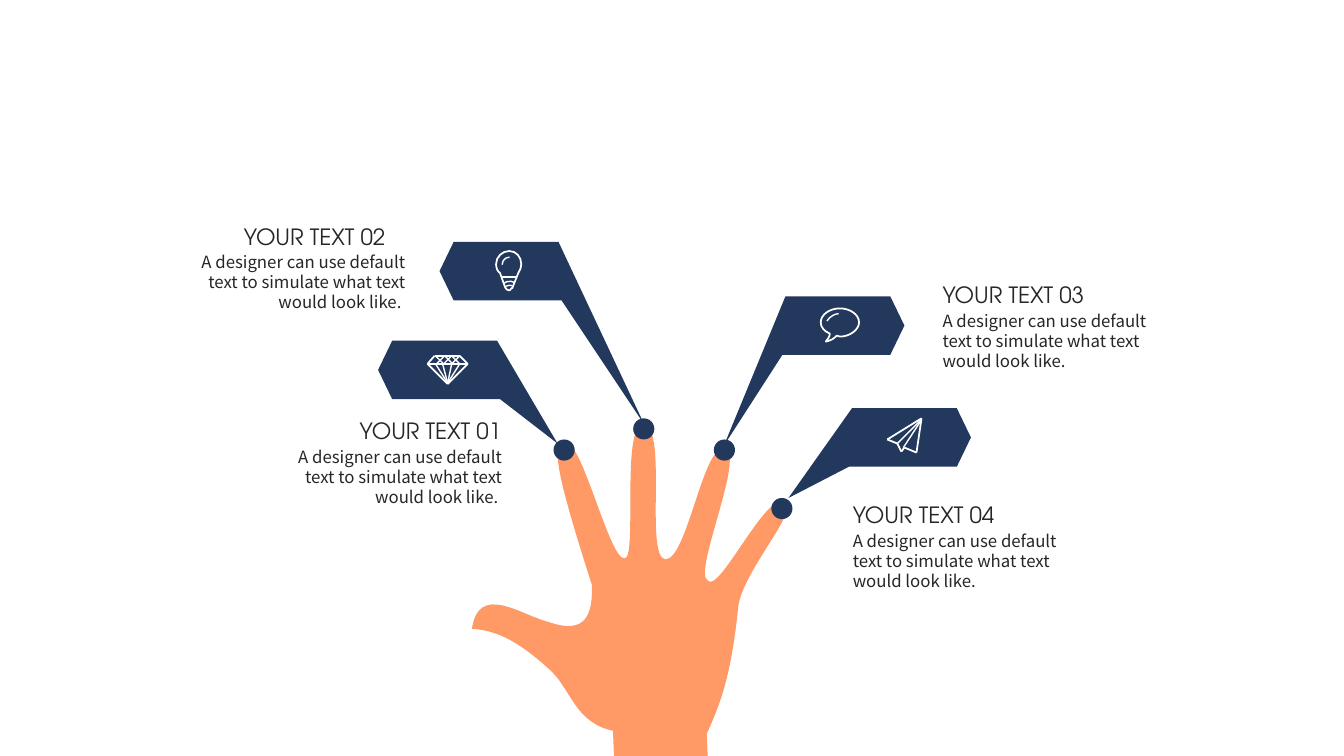
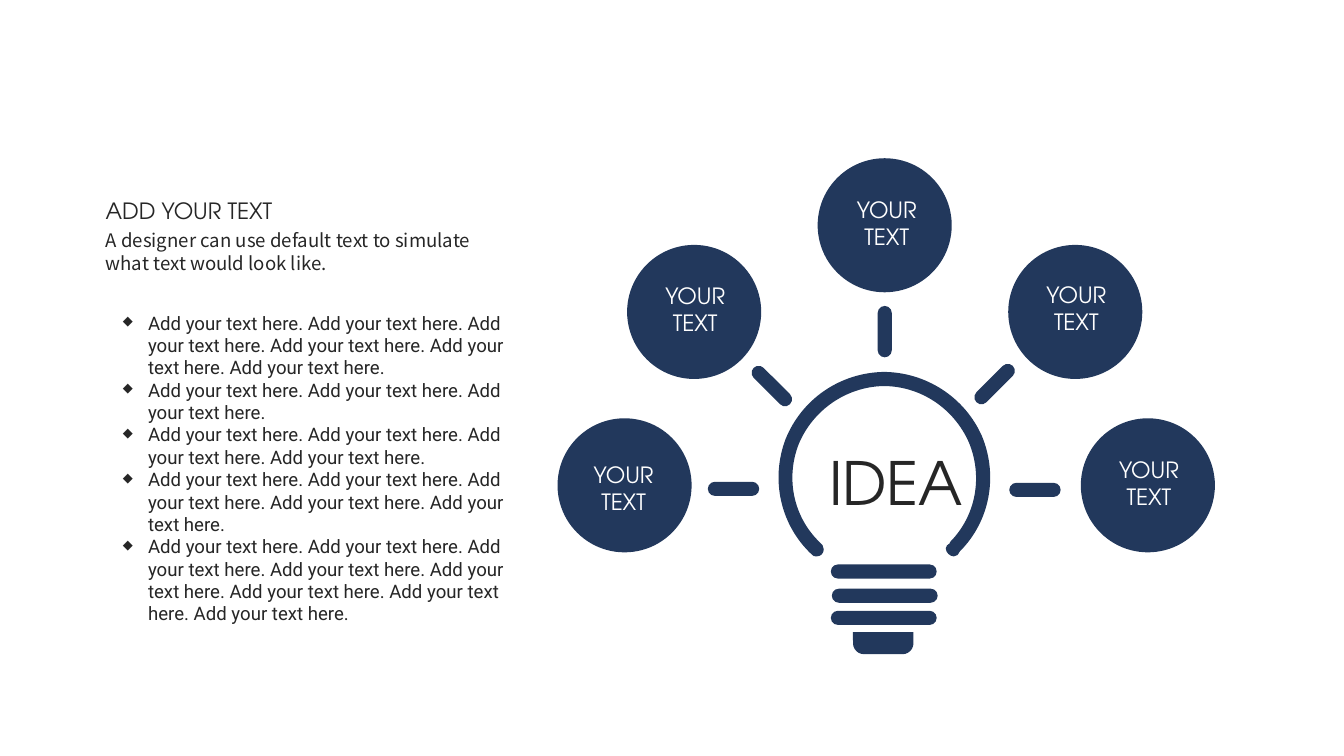
import pptx
import pptx.util
import pptx.dml.color
import pptx.enum.shapes
import pptx.enum.text
import pptx.oxml
import pptx.oxml.ns
import lxml.etree

COLORS = {"navy": "22385C", "skin": "FF9966", "ink": "262626", "white": "FFFFFF"}
HEADING_FONT = "TeX Gyre Adventor"
BODY_FONT = "Noto Sans CJK SC"
LIST_FONT = "Roboto"
CM_PER_INCH = 2.54
SHAPES = pptx.enum.shapes.MSO_SHAPE
ALIGN = {
    "left": pptx.enum.text.PP_ALIGN.LEFT,
    "center": pptx.enum.text.PP_ALIGN.CENTER,
    "right": pptx.enum.text.PP_ALIGN.RIGHT,
}

SAMPLE = "A designer can use default text to simulate what text would look like."

HAND = [
    (6.09, 7.51), (6.08, 7.25),
    (5.71, 7.17, 5.67, 6.86, 5.47, 6.66), (5.26, 6.47, 5, 6.25, 4.68, 6.24),
    (4.75, 5.78, 5.16, 6.1, 5.44, 6.17), (5.83, 6.31, 5.88, 6.07, 5.87, 5.8),
    (5.45, 4.49, 5.5, 4.44, 5.61, 4.4), (5.77, 4.35, 6.05, 5.58, 6.2, 5.54),
    (6.32, 5.51, 6.16, 4.21, 6.38, 4.22), (6.63, 4.22, 6.39, 5.53, 6.6, 5.55),
    (6.82, 5.55, 6.98, 4.36, 7.2, 4.45), (7.38, 4.55, 6.87, 5.69, 7.02, 5.76),
    (7.13, 5.9, 7.61, 4.85, 7.79, 4.98), (7.93, 5.07, 7.34, 5.7, 7.32, 6.04),
    (7.25, 6.72, 7.14, 6.99, 7.01, 7.28), (7.02, 7.52),
]

CALLOUTS = [
    {"tip": (5.53, 4.4), "corner": (4.93, 3.38), "side": -1, "dot": (5.49, 4.36),
     "title": "YOUR TEXT 01", "title_at": (3.28, 4.09), "title_align": "right",
     "body": SAMPLE + " ", "body_at": (2.85, 4.38), "align": "right"},
    {"tip": (6.39, 4.21), "corner": (5.54, 2.4), "side": -1, "dot": (6.28, 4.15),
     "title": "YOUR TEXT 02", "title_at": (2.32, 2.16), "title_align": "left",
     "body": SAMPLE + " ", "body_at": (1.89, 2.45), "align": "right"},
    {"tip": (7.18, 4.42), "corner": (7.79, 2.94), "side": 1, "dot": (7.08, 4.36),
     "title": "YOUR TEXT 03", "title_at": (9.25, 2.74), "title_align": "left",
     "body": SAMPLE, "body_at": (9.25, 3.03), "align": "left"},
    {"tip": (7.82, 4.94), "corner": (8.45, 4.05), "side": 1, "dot": (7.65, 4.94),
     "title": "YOUR TEXT 04", "title_at": (8.36, 4.92), "title_align": "left",
     "body": SAMPLE, "body_at": (8.36, 5.22), "align": "left"},
]

DIAMOND_TIP = (4.44, 3.8)
ICONS = {
    "speech": {
        "outline": [
            (8.33, 3.06), (8.43, 3.06, 8.52, 3.12, 8.52, 3.2),
            (8.52, 3.27, 8.43, 3.34, 8.33, 3.34), (8.3, 3.33),
            (8.27, 3.36, 8.24, 3.38, 8.19, 3.39), (8.2, 3.37, 8.23, 3.35, 8.23, 3.31),
            (8.18, 3.29, 8.14, 3.25, 8.14, 3.2), (8.14, 3.12, 8.23, 3.06, 8.33, 3.06),
        ],
        "arcs": [(8.18, 3.11, 0.31, 301.2, 162, 193.58)],
    },
    "diamond": {
        "edges": [(4.31, 3.53), (4.56, 3.53), (4.64, 3.61), (4.44, 3.81),
                  (4.24, 3.61), (4.31, 3.53)],
        "details": [((4.25, 3.61), (4.63, 3.61))]
        + [(DIAMOND_TIP, (x, 3.61)) for x in (4.32, 4.39, 4.48, 4.56)]
        + [((x, 3.53), (x + 0.08, 3.61)) for x in (4.32, 4.41, 4.48)]
        + [((x, 3.53), (x - 0.08, 3.61)) for x in (4.41, 4.48, 4.56)],
    },
    "plane": {
        "edges": [(9.14, 4.15), (8.8, 4.36), (8.9, 4.4), (8.94, 4.48),
                  (8.97, 4.44), (9.09, 4.49), (9.14, 4.15)],
        "details": [((9.13, 4.17), (8.9, 4.4)), ((9.13, 4.18), (8.96, 4.44))],
    },
    "bulb": {
        "outline": [
            (5.05, 2.49), (5.12, 2.49, 5.17, 2.55, 5.17, 2.62),
            (5.17, 2.65, 5.16, 2.68, 5.14, 2.71), (5.08, 2.86), (5.07, 2.86),
            (5.07, 2.87, 5.06, 2.88, 5.05, 2.88), (5.03, 2.88, 5.02, 2.87, 5.01, 2.85),
            (4.96, 2.71), (4.93, 2.69, 4.92, 2.65, 4.92, 2.62),
            (4.92, 2.55, 4.98, 2.49, 5.05, 2.49),
        ],
        "edges": [(4.97, 2.75), (5.12, 2.75)],
        "arcs": [(4.98, 2.55, 0.15, 270, 162, 215.5),
                 (4.97, 2.79, 0.17, 309, 168.25, 210.6),
                 (4.98, 2.83, 0.15, 300, 175.25, 210.13)],
    },
}

CIRCLE_SIZE = 1.33
CIRCLES = [
    ((5.53, 4.15), (5.76, 4.53)),
    ((6.22, 2.43), (6.47, 2.75)),
    ((8.11, 1.57), (8.37, 1.9)),
    ((10, 2.43), (10.25, 2.74)),
    ((10.72, 4.15), (10.97, 4.48)),
]
PILL_HEIGHT = 0.14
PILLS = [
    (8.24, 5.6, 1.05, 0), (8.25, 5.84, 1.05, 0), (8.24, 6.06, 1.05, 0),
    (7.02, 4.78, 0.51, 0), (7.4, 3.76, 0.51, 45), (9.61, 3.74, 0.51, 315),
    (10.01, 4.79, 0.51, 0), (8.52, 3.22, 0.51, 90),
]
BULB_RING = [
    (8.76, 3.69), (9.18, 3.69, 9.57, 3.94, 9.74, 4.33), (9.9, 4.72, 9.82, 5.17, 9.52, 5.47),
    (9.51, 5.5, 9.49, 5.52, 9.46, 5.52), (9.42, 5.52, 9.38, 5.48, 9.38, 5.44),
    (9.38, 5.42, 9.4, 5.4, 9.42, 5.39), (9.42, 5.38),
    (9.68, 5.12, 9.75, 4.73, 9.61, 4.39), (9.46, 4.05, 9.13, 3.83, 8.76, 3.83),
    (8.39, 3.84, 8.06, 4.07, 7.92, 4.41), (7.79, 4.75, 7.87, 5.13, 8.13, 5.38),
    (8.15, 5.39, 8.17, 5.42, 8.17, 5.45), (8.17, 5.49, 8.14, 5.52, 8.1, 5.52),
    (8.08, 5.52, 8.06, 5.52, 8.05, 5.5), (7.74, 5.21, 7.64, 4.76, 7.79, 4.36),
    (7.95, 3.96, 8.33, 3.7, 8.76, 3.69),
]
SENTENCE = "Add your text here."
BULLETS = [" ".join([SENTENCE] * count) for count in (6, 3, 4, 5, 8)]


def length(inches):
    return pptx.util.Cm(inches * CM_PER_INCH)


def lengths(values):
    return [length(value) for value in values]


def color(name):
    return pptx.dml.color.RGBColor.from_string(COLORS[name])


def add_xml(parent, tag, **attributes):
    return lxml.etree.SubElement(parent, pptx.oxml.ns.qn(tag), **attributes)


def paint(shape, fill=None, line=None, weight=1.25):
    shape.shadow.inherit = False
    if fill:
        shape.fill.solid()
        shape.fill.fore_color.rgb = color(fill)
    else:
        shape.fill.background()
    if line:
        shape.line.color.rgb = color(line)
        shape.line.width = pptx.util.Pt(weight)
    else:
        shape.line.fill.background()


def add_preset(shapes, kind, frame, rotation=0, adjustments=(), **style):
    shape = shapes.add_shape(kind, *lengths(frame))
    shape.rotation = rotation
    for index, value in enumerate(adjustments):
        shape.adjustments[index] = value
    paint(shape, **style)


def bend(shape, segments, left, top):
    straight = list(shape._element.iter(pptx.oxml.ns.qn("a:lnTo")))
    for line, segment in zip(straight, segments):
        if len(segment) == 2:
            continue
        line.tag = pptx.oxml.ns.qn("a:cubicBezTo")
        for point in list(line):
            line.remove(point)
        values = lengths(segment)
        for x, y in zip(values[::2], values[1::2]):
            add_xml(line, "a:pt", x=str(x - left), y=str(y - top))


def add_outline(shapes, outline, **style):
    anchors = [lengths(segment[-2:]) for segment in outline]
    builder = shapes.build_freeform(*anchors[0], scale=1.0)
    builder.add_line_segments(anchors[1:], close=True)
    shape = builder.convert_to_shape()
    left, top = map(min, zip(*anchors))
    bend(shape, outline[1:], left, top)
    paint(shape, **style)


def add_stroke(shapes, start, end, weight):
    stroke = shapes.add_connector(
        pptx.enum.shapes.MSO_CONNECTOR.STRAIGHT, *lengths(start + end))
    stroke.line.color.rgb = color("white")
    stroke.line.width = pptx.util.Pt(weight)
    add_xml(stroke._element.spPr, "a:effectLst")


def add_icon(page, icon):
    shapes = page.shapes.add_group_shape().shapes
    if "outline" in icon:
        add_outline(shapes, icon["outline"], line="white")
    edges = icon.get("edges", [])
    for start, end in zip(edges, edges[1:]):
        add_stroke(shapes, start, end, 1.25)
    for start, end in icon.get("details", []):
        add_stroke(shapes, start, end, 1)
    for left, top, size, rotation, begin, finish in icon.get("arcs", []):
        add_preset(shapes, SHAPES.ARC, (left, top, size, size), rotation,
                   (begin, finish), line="white", weight=1)


def add_bullet(para):
    properties = para._p.get_or_add_pPr()
    properties.set("marL", str(length(0.25)))
    properties.set("indent", str(-length(0.25)))
    add_xml(properties, "a:buSzPct", val="70000")
    add_xml(properties, "a:buChar", char="◆")


def add_text(page, text, at, size, font=HEADING_FONT, points=16, ink="ink",
             align="left", spacing=None, wrap=True, bullets=False):
    box = page.shapes.add_textbox(*lengths(at + size))
    frame = box.text_frame
    frame.word_wrap = wrap
    lines = [text] if isinstance(text, str) else text
    for index, line in enumerate(lines):
        para = frame.add_paragraph() if index else frame.paragraphs[0]
        para.alignment = ALIGN[align]
        if spacing:
            para.line_spacing = pptx.util.Pt(spacing)
        if bullets:
            add_bullet(para)
        span = para.add_run()
        span.text = line
        span.font.name = font
        span.font.size = pptx.util.Pt(points)
        span.font.color.rgb = color(ink)


def ribbon(tip, corner, side):
    x, y = corner
    return [tip, corner, (x + side * 1.04, y), (x + side * 1.18, y + 0.29),
            (x + side * 1.04, y + 0.58), (x - side * 0.03, y + 0.58)]


def build_hand(page):
    shapes = page.shapes
    add_outline(shapes, HAND, fill="skin")
    for item in CALLOUTS:
        add_outline(shapes, ribbon(item["tip"], item["corner"], item["side"]), fill="navy")
    for item in CALLOUTS:
        add_preset(shapes, SHAPES.OVAL, item["dot"] + (0.21, 0.21), fill="navy")
    for item in CALLOUTS:
        add_text(page, item["title"], item["title_at"], (1.79, 0.37),
                 align=item["title_align"])
        add_text(page, item["body"], item["body_at"], (2.23, 0.71), font=BODY_FONT,
                 points=12, align=item["align"], spacing=14.3)
    for icon in ICONS.values():
        add_icon(page, icon)


def build_idea(page):
    shapes = page.shapes
    for circle_at, label_at in CIRCLES:
        add_preset(shapes, SHAPES.OVAL, circle_at + (CIRCLE_SIZE, CIRCLE_SIZE), fill="navy")
    for left, top, width, rotation in PILLS:
        add_preset(shapes, SHAPES.ROUNDED_RECTANGLE, (left, top, width, PILL_HEIGHT),
                   rotation, (0.5,), fill="navy")
    add_preset(shapes, SHAPES.ROUND_2_SAME_RECTANGLE, (8.46, 6.27, 0.6, 0.22), 180,
               (0.5, 0), fill="navy")
    add_outline(shapes, BULB_RING, fill="navy")
    add_text(page, "IDEA", (7.99, 4.37), (1.66, 0.82), points=42.6, align="right")
    add_text(page, "ADD YOUR TEXT", (0.95, 1.91), (2.28, 0.37))
    add_text(page, SAMPLE, (0.95, 2.22), (4.11, 0.55), font=BODY_FONT, points=13.3,
             spacing=16.4)
    add_text(page, BULLETS, (1.12, 3.04), (4.11, 3.24), font=LIST_FONT, points=13.3,
             spacing=16, bullets=True)
    for circle_at, label_at in CIRCLES:
        add_text(page, ["YOUR", "TEXT"], label_at, (0.85, 0.64), ink="white",
                 align="center", wrap=False)


def main():
    deck = pptx.Presentation()
    deck.slide_width, deck.slide_height = lengths((13.33, 7.5))
    for build in (build_hand, build_idea):
        build(deck.slides.add_slide(deck.slide_layouts[6]))
    deck.save("out.pptx")


if __name__ == "__main__":
    main()
